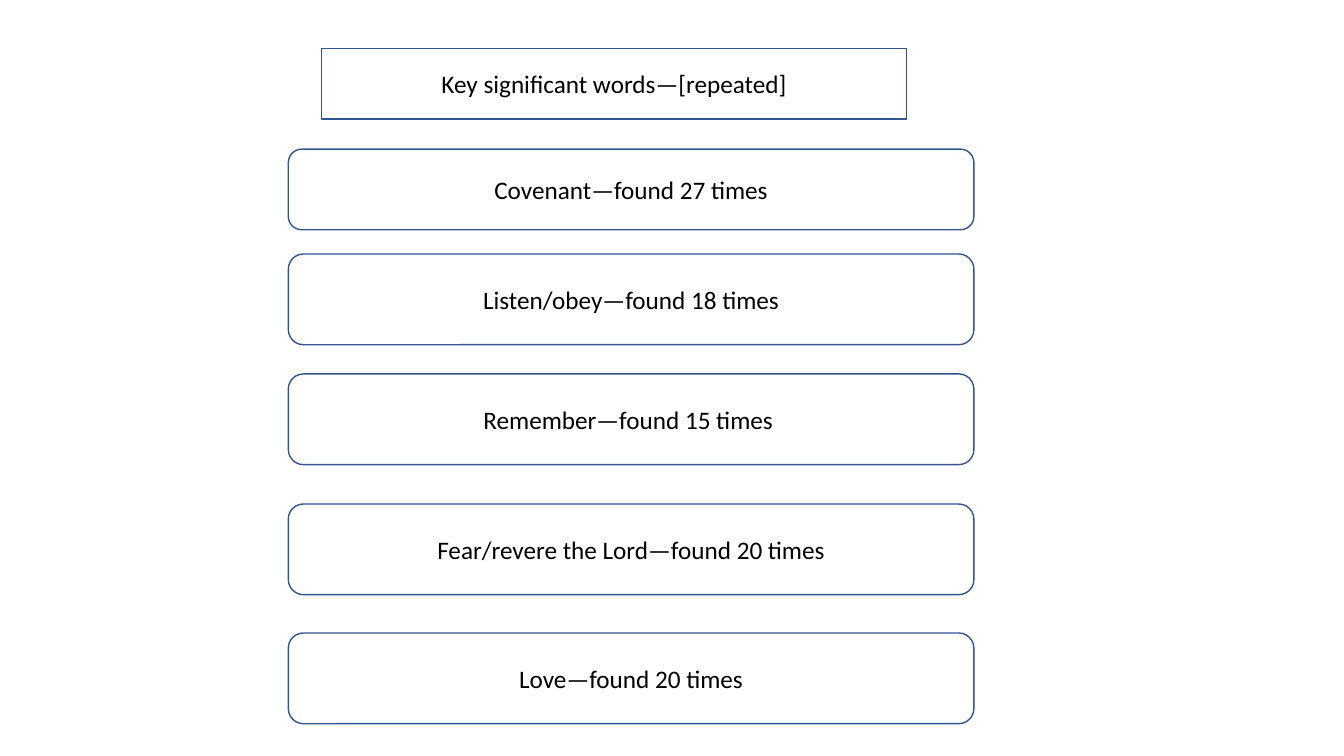
from lxml.etree import SubElement
from pptx import Presentation
from pptx.dml.color import RGBColor
from pptx.enum.shapes import MSO_SHAPE as Shape
from pptx.enum.text import MSO_ANCHOR as Anchor, PP_ALIGN as Align
from pptx.oxml.ns import qn
from pptx.util import Inches, Pt

WHITE = RGBColor(0xFF, 0xFF, 0xFF)
BLACK = RGBColor(0, 0, 0)
BLUE = RGBColor(0x32, 0x54, 0x91)

HEADING = "Key significant words—[repeated]"
WORD_LEFT, WORD_WIDTH = 2.86, 6.8
WORDS = [
    ("Covenant—found 27 times", 1.48, 0.8),
    ("Listen/obey—found 18 times", 2.52, 0.9),
    ("Remember—found 15 times ", 3.71, 0.9),
    ("Fear/revere the Lord—found 20 times", 5, 0.9),
    ("Love—found 20 times", 6.28, 0.9),
]


def style_box(box, text):
    box.fill.solid()
    box.fill.fore_color.rgb = WHITE
    box.line.color.rgb = BLUE
    box.line.width = Pt(1)
    frame = box.text_frame
    frame.text = text
    frame.word_wrap = True
    frame.vertical_anchor = Anchor.MIDDLE
    para = frame.paragraphs[0]
    para.alignment = Align.CENTER
    para.font.name = "Calibri"
    para.font.size = Pt(18)
    para.font.color.rgb = BLACK


def place_heading(page, left, top, width, height):
    title = page.shapes.title
    title.left, title.top = Inches(left), Inches(top)
    title.width, title.height = Inches(width), Inches(height)
    outline = SubElement(title.element.spPr, qn("a:prstGeom"), prst="roundRect")
    SubElement(outline, qn("a:avLst"))
    style_box(title, HEADING)


def place_word(page, text, left, top, width, height):
    box = page.shapes.add_shape(
        Shape.ROUNDED_RECTANGLE,
        Inches(left), Inches(top), Inches(width), Inches(height),
    )
    box.shadow.inherit = False
    style_box(box, text)


def main():
    deck = Presentation()
    deck.slide_width, deck.slide_height = Inches(13.33), Inches(7.5)
    page = deck.slides.add_slide(deck.slide_layouts[5])
    place_heading(page, 3.19, 0.48, 5.8, 0.7)
    for text, top, height in WORDS:
        place_word(page, text, WORD_LEFT, top, WORD_WIDTH, height)
    deck.save("out.pptx")


if __name__ == "__main__":
    main()
